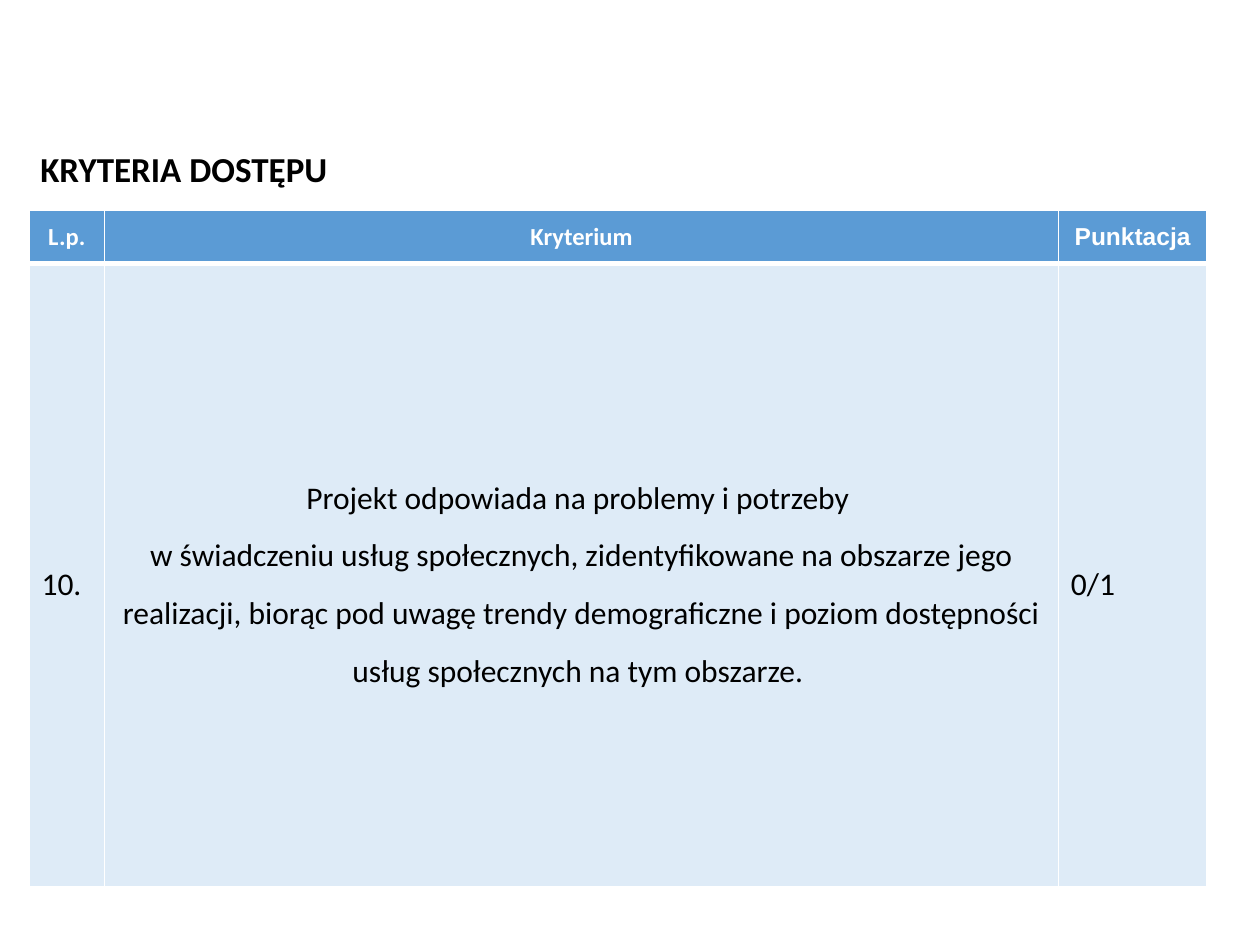
from dataclasses import dataclass

from pptx import Presentation
from pptx.dml.color import RGBColor
from pptx.enum.text import MSO_ANCHOR, PP_ALIGN
from pptx.oxml.ns import qn
from pptx.util import Inches, Pt
from lxml.etree import SubElement


@dataclass(frozen=True)
class Theme:
    """Colours, fonts and type sizes of the slide."""
    head: str = "5B9BD5"
    body: str = "DEEBF7"
    white: str = "FFFFFF"
    black: str = "000000"
    font: str = "Calibri"
    alt: str = "Arial"
    big: int = 20
    mid: int = 18
    small: int = 14


THEME = Theme()
COLS = (0.6, 7.57, 1.18)
ROWS = (0.42, 4.95)
HEADS = (("L.p.", THEME.font), ("Kryterium", THEME.font), ("Punktacja", THEME.alt))
CELLS = (
    ("10.", PP_ALIGN.LEFT),
    ("Projekt odpowiada na problemy i potrzeby \n"
     "w świadczeniu usług społecznych, zidentyfikowane na obszarze jego realizacji, "
     "biorąc pod uwagę trendy demograficzne i poziom dostępności usług społecznych "
     "na tym obszarze. ", PP_ALIGN.CENTER),
    ("0/1", PP_ALIGN.LEFT),
)


def apply(item, form):
    """Set each attribute named in a dict of format values."""
    for name, value in form.items():
        setattr(item, name, value)


def write(frame, text, size, color, bold, align, font=THEME.font, space=1.0):
    """Fill a text frame with one formatted paragraph."""
    para = frame.paragraphs[0]
    para.text = text
    apply(para, {"alignment": align, "line_spacing": space})
    for run in para.runs:
        apply(run.font, {"name": font, "size": Pt(size), "bold": bold})
        run.font.color.rgb = RGBColor.from_string(color)


def edge(cell, sides):
    """Draw white cell borders with widths given by side."""
    props = cell._tc.get_or_add_tcPr()
    for side, width in sides.items():
        line = SubElement(props, qn(f"a:ln{side}"), w=str(Pt(width)))
        fill = SubElement(line, qn("a:solidFill"))
        SubElement(fill, qn("a:srgbClr"), val=THEME.white)


def paint(cell, color, sides):
    """Give a cell its borders, fill and anchor."""
    edge(cell, sides)
    cell.fill.solid()
    cell.fill.fore_color.rgb = RGBColor.from_string(color)
    cell.vertical_anchor = MSO_ANCHOR.MIDDLE


def add_title(slide):
    """Place the heading in the title placeholder."""
    title = slide.shapes.title
    apply(title, {"left": Inches(0.22), "top": Inches(1.12),
                  "width": Inches(2.59), "height": Inches(0.44)})
    apply(title.text_frame, {"word_wrap": False, "vertical_anchor": MSO_ANCHOR.MIDDLE})
    write(title.text_frame, "KRYTERIA DOSTĘPU", THEME.big, THEME.black, True, PP_ALIGN.LEFT)


def add_grid(slide):
    """Add the table of criteria."""
    box = (Inches(n) for n in (0.23, 1.67, sum(COLS), sum(ROWS)))
    table = slide.shapes.add_table(len(ROWS), len(COLS), *box).table
    for col, width in zip(table.columns, COLS):
        col.width = Inches(width)
    for row, height in zip(table.rows, ROWS):
        row.height = Inches(height)
    for col, (text, font) in enumerate(HEADS):
        cell = table.cell(0, col)
        paint(cell, THEME.head, {"L": 1, "R": 1, "T": 1, "B": 3})
        write(cell.text_frame, text, THEME.small, THEME.white, True, PP_ALIGN.CENTER, font)
    for col, (text, align) in enumerate(CELLS):
        cell = table.cell(1, col)
        paint(cell, THEME.body, {"L": 1, "R": 1, "T": 3, "B": 1})
        write(cell.text_frame, text, THEME.mid, THEME.black, False, align, space=1.5)


def main():
    """Build and save the slide."""
    deck = Presentation()
    apply(deck, {"slide_width": Inches(10), "slide_height": Inches(7.5)})
    slide = deck.slides.add_slide(deck.slide_layouts[5])
    add_grid(slide)
    add_title(slide)
    deck.save("out.pptx")


if __name__ == "__main__":
    main()
